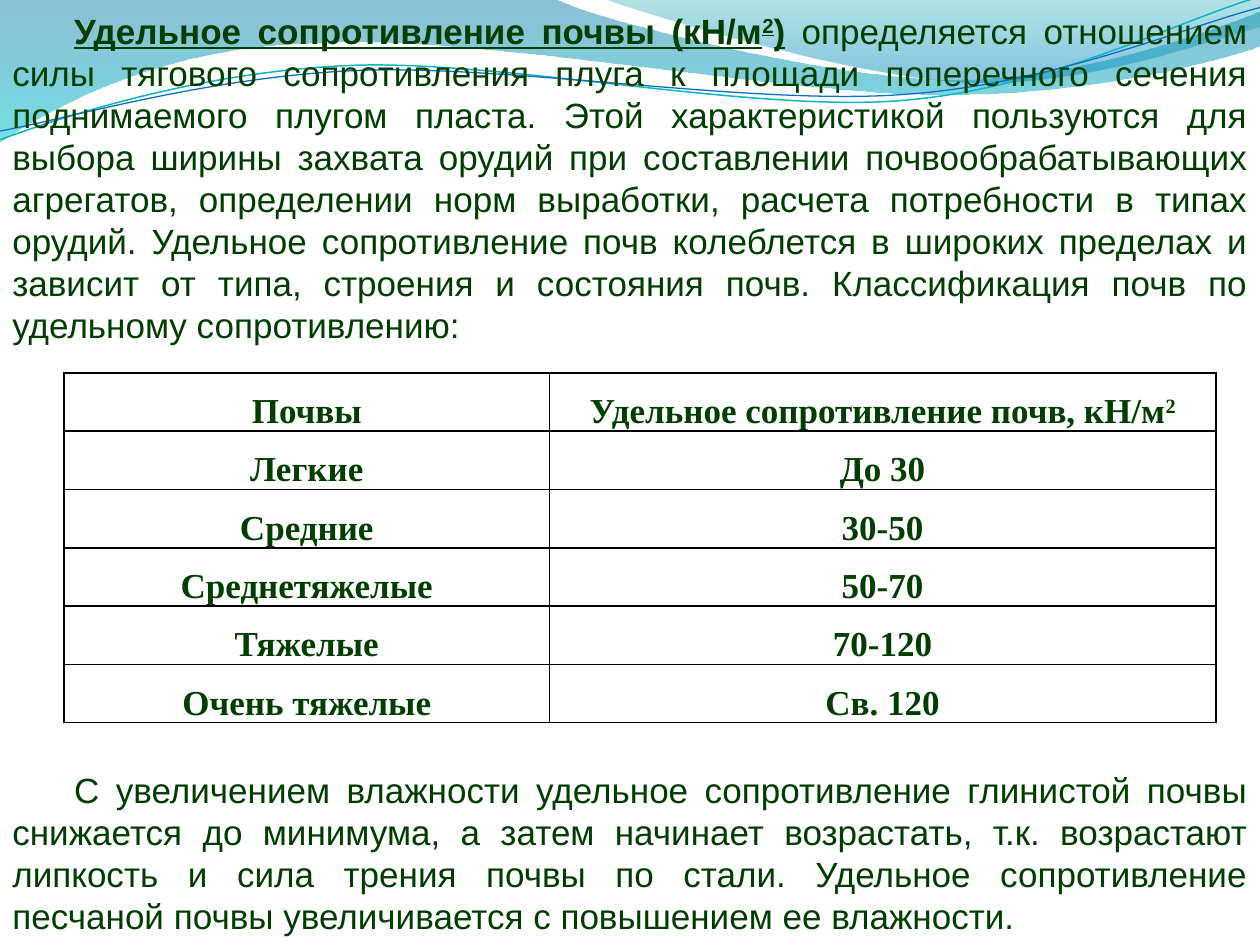
import math

from lxml import etree
from pptx import Presentation
from pptx import util as u
from pptx.dml.color import RGBColor
from pptx.enum import text
from pptx.oxml import ns

WIDTH, HEIGHT = u.Inches(10), u.Inches(7.5)
DARK_GREEN = RGBColor(0x00, 0x3E, 0x00)
DEEP_BLUE = RGBColor(0x00, 0x74, 0xA1)
CYAN = RGBColor(0x00, 0xC6, 0xCF)
TEAL = RGBColor(0x00, 0xA1, 0xA9)
SEA_BLUE = RGBColor(0x00, 0x8B, 0xBF)
LINE_TEAL = RGBColor(0x0A, 0xB8, 0xBF)
LINE_BLUE = RGBColor(0x0F, 0x6F, 0xC6)
CURVE_TILT = 2.7

# Outlines in inches: a start point, then lines (1 point) or cubic curves (3 points)
BROAD_WAVE = [[(0, 0)], [(4.4, -0.01)],
              [(4.76, 0.17), (6.64, 0.63), (7.58, 0.63)],
              [(8.53, 0.63), (9.58, 0.26), (10, 0.09)], [(10.01, 0.36)],
              [(9.83, 0.44), (8.7, 0.76), (7.46, 0.75)],
              [(6.22, 0.75), (3.82, 0.28), (2.57, 0.34)],
              [(1.29, 0.36), (0.46, 0.83), (-0.01, 1.13)], [(0, 0)]]
RIGHT_WAVE = [[(4.79, -0.01)], [(5.09, 0.11), (6.82, 0.62), (7.69, 0.65)],
              [(8.56, 0.69), (9.61, 0.32), (10, 0.21)], [(10, 0)],
              [(4.79, -0.01)]]
TEAL_CURVE = [[(0, 1.11)], [(0.48, 0.93), (1.58, 0.57), (2.77, 0.52)],
              [(3.95, 0.47), (5.93, 0.89), (7.13, 0.8)],
              [(8.33, 0.71), (9.38, 0.15), (9.98, -0.02)]]
BLUE_CURVE = [[(0, 1.04)], [(0.47, 0.96), (1.64, 0.61), (2.83, 0.56)],
              [(4.03, 0.51), (5.97, 0.84), (7.17, 0.75)],
              [(8.36, 0.67), (9.41, 0.21), (10, 0.06)]]

SOILS = [("Почвы", "Удельное сопротивление почв, кН/м"),
         ("Легкие", "До 30"), ("Средние", "30-50"),
         ("Среднетяжелые", "50-70"), ("Тяжелые", "70-120"),
         ("Очень тяжелые", "Св. 120")]
TERM = "Удельное сопротивление почвы (кН/м"
DEFINITION = (
    "определяется отношением силы тягового сопротивления плуга к площади "
    "поперечного сечения поднимаемого плугом пласта. Этой характеристикой "
    "пользуются для выбора ширины захвата орудий при составлении "
    "почвообрабатывающих агрегатов, определении норм выработки, расчета "
    "потребности в типах орудий. Удельное сопротивление почв колеблется в "
    "широких пределах и зависит от типа, строения и состояния почв. "
    "Классификация почв по удельному сопротивлению:")
MOISTURE = (
    "С увеличением влажности удельное сопротивление глинистой почвы "
    "снижается до минимума, а затем начинает возрастать, т.к. возрастают "
    "липкость и сила трения почвы по стали. Удельное сопротивление песчаной "
    "почвы увеличивается с повышением ее влажности.")


def add_outline(slide, outline, close):
    """Build a freeform through the end points, then bend its curved parts."""
    steps = [[(u.Inches(x), u.Inches(y)) for x, y in step] for step in outline]
    builder = slide.shapes.build_freeform(*steps[0][0])
    builder.add_line_segments([step[-1] for step in steps[1:]], close=close)
    shape = builder.convert_to_shape()
    shape.shadow.inherit = False
    lines = list(shape._element.spPr.iter(ns.qn("a:lnTo")))
    for line, step in zip(lines, steps[1:]):
        if len(step) == 3:
            curve = etree.Element(ns.qn("a:cubicBezTo"))
            for x, y in step:
                etree.SubElement(curve, ns.qn("a:pt"),
                                 x=str(x - shape.left), y=str(y - shape.top))
            line.getparent().replace(line, curve)
    return shape


def add_wave(slide, outline, stops):
    """Stops are (position, colour, opacity in percent), from top to bottom."""
    wave = add_outline(slide, outline, True)
    wave.line.fill.background()
    wave.fill.gradient()
    wave.fill.gradient_angle = 270
    for stop, (position, colour, _) in zip(wave.fill.gradient_stops, stops):
        stop.position = position
        stop.color.rgb = colour
    colours = wave._element.spPr.iter(ns.qn("a:srgbClr"))
    for colour, (_, _, opacity) in zip(list(colours), stops):
        etree.SubElement(colour, ns.qn("a:alpha"), val=str(opacity * 1000))


def level(outline, centre):
    """Turn the outline by the tilt, which the shape's rotation undoes."""
    cx, cy = centre
    cos, sin = math.cos(math.radians(CURVE_TILT)), math.sin(math.radians(CURVE_TILT))
    return [[(cx + (x - cx) * cos - (y - cy) * sin,
              cy + (x - cx) * sin + (y - cy) * cos) for x, y in step]
            for step in outline]


def add_curve(slide, outline, centre, colour, width):
    curve = add_outline(slide, level(outline, centre), False)
    curve.rotation = -CURVE_TILT
    curve.fill.background()
    curve.line.color.rgb = colour
    curve.line.width = u.Pt(width)


def style_font(font, name, bold):
    font.name, font.size, font.bold = name, u.Pt(20), bold
    font.color.rgb = DARK_GREEN


def add_superscript(paragraph, words):
    run = paragraph.add_run()
    run.text = words
    run._r.get_or_add_rPr().set("baseline", "30000")
    return run


def add_body(slide, top, height, anchor):
    """Add a justified full-width text with an indented first line."""
    box = slide.shapes.add_textbox(0, u.Inches(top), WIDTH, u.Inches(height))
    frame = box.text_frame
    frame.word_wrap = True
    frame.auto_size = text.MSO_AUTO_SIZE.SHAPE_TO_FIT_TEXT
    frame.vertical_anchor = anchor
    paragraph = frame.paragraphs[0]
    paragraph.alignment = text.PP_ALIGN.JUSTIFY
    paragraph._p.get_or_add_pPr().set("indent", str(u.Inches(0.49)))
    style_font(paragraph.font, "Arial", False)
    return paragraph


def add_definition(slide):
    paragraph = add_body(slide, 0, 2.81, text.MSO_ANCHOR.MIDDLE)
    term = paragraph.add_run()
    term.text = TERM
    square = add_superscript(paragraph, "2")
    bracket, space, rest = (paragraph.add_run() for _ in range(3))
    bracket.text, space.text, rest.text = ")", " ", DEFINITION
    for run in (term, square, bracket):
        run.font.bold = run.font.underline = True
    space.font.bold = True


def add_borders(cell):
    properties = cell._tc.get_or_add_tcPr()
    for side in ("lnL", "lnR", "lnT", "lnB"):
        border = etree.SubElement(properties, ns.qn("a:" + side), w=str(u.Pt(1)))
        fill = etree.SubElement(border, ns.qn("a:solidFill"))
        etree.SubElement(fill, ns.qn("a:srgbClr"), val="000000")


def add_soil_table(slide):
    row_height = u.Inches(0.39)
    widths = u.Inches(3.85), u.Inches(5.29)
    table = slide.shapes.add_table(
        len(SOILS), len(widths), u.Inches(0.51), u.Inches(2.96),
        sum(widths), u.Inches(3)).table
    for column, width in zip(table.columns, widths):
        column.width = width
    for r, row in enumerate(SOILS):
        table.rows[r].height = row_height
        for c, words in enumerate(row):
            cell = table.cell(r, c)
            add_borders(cell)
            cell.fill.background()
            cell.margin_left = cell.margin_right = u.Inches(0.07)
            cell.margin_top = cell.margin_bottom = 0
            paragraph = cell.text_frame.paragraphs[0]
            paragraph.alignment = text.PP_ALIGN.CENTER
            paragraph.line_spacing = 1.5
            style_font(paragraph.font, "Times New Roman", True)
            paragraph.add_run().text = words
    add_superscript(table.cell(0, 1).text_frame.paragraphs[0], "2")


def main():
    prs = Presentation()
    prs.slide_width, prs.slide_height = WIDTH, HEIGHT
    slide = prs.slides.add_slide(prs.slide_layouts[6])

    # Waves along the top edge
    add_wave(slide, BROAD_WAVE, [(0, DEEP_BLUE, 45), (1, CYAN, 55)])
    add_wave(slide, RIGHT_WAVE, [(0, TEAL, 30), (0.8, SEA_BLUE, 45)])
    add_curve(slide, TEAL_CURVE, (4.99, 0.58), LINE_TEAL, 0.85)
    add_curve(slide, BLUE_CURVE, (5, 0.59), LINE_BLUE, 0.75)

    # Soil classes between the definition and the note on moisture
    add_soil_table(slide)
    add_definition(slide)
    moisture = add_body(slide, 6.05, 1.45, text.MSO_ANCHOR.TOP)
    moisture.add_run().text = MOISTURE

    prs.save("out.pptx")


if __name__ == "__main__":
    main()
